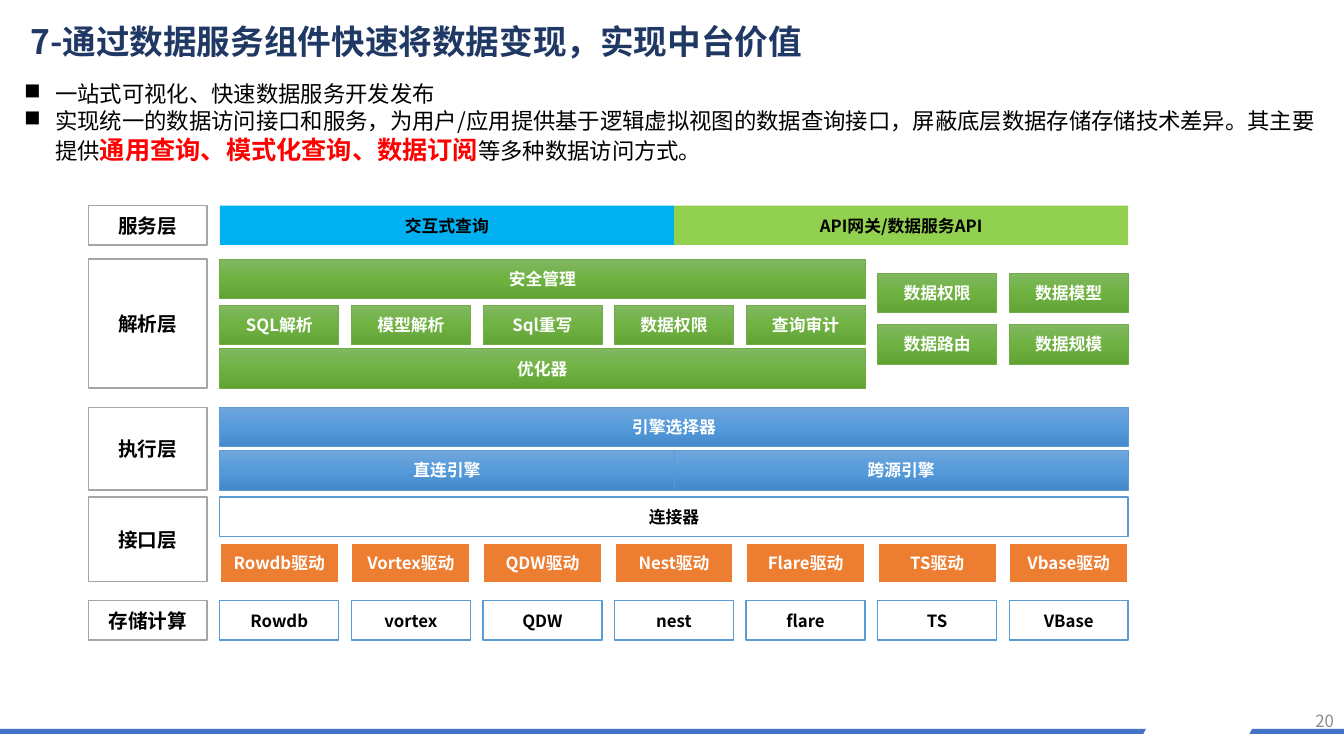
from copy import deepcopy
from lxml.etree import SubElement
from pptx import Presentation
from pptx.dml.color import RGBColor
from pptx.enum.shapes import MSO_SHAPE
from pptx.enum.text import MSO_ANCHOR, MSO_AUTO_SIZE, PP_ALIGN
from pptx.oxml.ns import qn
from pptx.util import Inches, Pt

FONT = "Noto Sans CJK SC"
BLACK = RGBColor(0x00, 0x00, 0x00)
WHITE = RGBColor(0xFF, 0xFF, 0xFF)
RED = RGBColor(0xFF, 0x00, 0x00)
NAVY = RGBColor(0x20, 0x38, 0x64)
GRAY = RGBColor(0x8C, 0x8C, 0x8C)
SILVER = RGBColor(0xA5, 0xA5, 0xA5)
FOOTER_BLUE = RGBColor(0x44, 0x72, 0xC4)
SKY = RGBColor(0x00, 0xB0, 0xF0)
LIME = RGBColor(0x92, 0xD0, 0x50)
ORANGE = RGBColor(0xED, 0x7D, 0x31)
BLUE = RGBColor(0x5B, 0x9B, 0xD5)
GREEN = RGBColor(0x70, 0xAD, 0x47)
GREEN_SHADES = (RGBColor(0x81, 0xB8, 0x61), RGBColor(0x6F, 0xB2, 0x42), RGBColor(0x62, 0xA3, 0x36))
BLUE_SHADES = (RGBColor(0x71, 0xA6, 0xDB), RGBColor(0x55, 0x9B, 0xDB), RGBColor(0x44, 0x8A, 0xCA))

TITLE = "7-通过数据服务组件快速将数据变现，实现中台价值"
PAGE_NUMBER = "20"
BULLETS = [
    [("一站式可视化、快速数据服务开发发布", 16, BLACK, False)],
    [
        ("实现统一的数据访问接口和服务，为用户/应用提供基于逻辑虚拟视图的数据查询接口，"
         "屏蔽底层数据存储存储技术差异。其主要提供", 16, BLACK, False),
        ("通用查询、模式化查询、数据订阅", 18, RED, True),
        ("等多种数据访问方式。", 16, BLACK, False),
    ],
]

# style: fills (one, or three for a gradient), line colour, line width, text colour, text size
STYLES = {
    "label": ((WHITE,), SILVER, 1, BLACK, 14),
    "query": ((SKY,), None, 0, BLACK, 12),
    "gateway": ((LIME,), None, 0, BLACK, 12),
    "parse": (GREEN_SHADES, GREEN, 0.5, WHITE, 12),
    "engine": (BLUE_SHADES, BLUE, 0.5, WHITE, 12),
    "driver": ((ORANGE,), WHITE, 1.5, WHITE, 12),
    "plain": ((WHITE,), BLUE, 1, BLACK, 12),
}
LAYERS = [
    ("服务层", 2.04, 0.39),
    ("解析层", 2.57, 1.28),
    ("执行层", 4.04, 0.82),
    ("接口层", 4.93, 0.84),
    ("存储计算", 5.96, 0.39),
]
STORES = ["Rowdb", "vortex", "QDW", "nest", "flare", "TS", "VBase"]
DRIVERS = ["Rowdb驱动", "Vortex驱动", "QDW驱动", "Nest驱动", "Flare驱动", "TS驱动", "Vbase驱动"]
# top, first column, columns spanned by the row, style, texts
GRID_ROWS = [
    (2.57, 0, 5, "parse", ["安全管理"]),
    (3.03, 0, 5, "parse", ["SQL解析", "模型解析", "Sql重写", "数据权限", "查询审计"]),
    (3.46, 0, 5, "parse", ["优化器"]),
    (2.71, 5, 2, "parse", ["数据权限", "数据模型"]),
    (3.22, 5, 2, "parse", ["数据路由", "数据规模"]),
    (4.04, 0, 7, "engine", ["引擎选择器"]),
    (4.93, 0, 7, "plain", ["连接器"]),
    (5.39, 0, 7, "driver", DRIVERS),
    (5.96, 0, 7, "plain", STORES),
]
HALVES = [
    (2.04, [("query", "交互式查询"), ("gateway", "API网关/数据服务API")]),
    (4.47, [("engine", "直连引擎"), ("engine", "跨源引擎")]),
]
GRID_LEFT, CELL, GAP, ROW_HEIGHT = 2.18, 1.18, 0.125, 0.39
PITCH = CELL + GAP
GRID_WIDTH = 7 * PITCH - GAP


def add_span(para, text, size, color, bold):
    span = para.add_run()
    span.text = text
    font = span.font
    font.name, font.size, font.bold = FONT, Pt(size), bold
    font.color.rgb = color
    SubElement(font._element, qn("a:ea")).set("typeface", FONT)


def paint(shape, fills, line=None, line_width=0):
    shape.shadow.inherit = False
    if len(fills) == 1:
        shape.fill.solid()
        shape.fill.fore_color.rgb = fills[0]
    else:
        shape.fill.gradient()
        shape.fill.gradient_angle = 270
        stops = shape._element.spPr.find(qn("a:gradFill")).find(qn("a:gsLst"))
        stops.append(deepcopy(stops[-1]))
        for index, (stop, color) in enumerate(zip(shape.fill.gradient_stops, fills)):
            stop.position = index / 2
            stop.color.rgb = color
    if line is None:
        shape.line.fill.background()
    else:
        shape.line.color.rgb = line
        shape.line.width = Pt(line_width)


def add_box(page, left, top, width, height, style, text):
    fills, line, line_width, color, size = STYLES[style]
    box = page.shapes.add_shape(
        MSO_SHAPE.RECTANGLE, Inches(left), Inches(top), Inches(width), Inches(height))
    paint(box, fills, line, line_width)
    box.text_frame.word_wrap = True
    box.text_frame.vertical_anchor = MSO_ANCHOR.MIDDLE
    para = box.text_frame.paragraphs[0]
    para.alignment = PP_ALIGN.CENTER
    add_span(para, text, size, color, True)


def add_text_frame(page, left, top, width, height):
    box = page.shapes.add_textbox(Inches(left), Inches(top), Inches(width), Inches(height))
    box.text_frame.word_wrap = True
    return box.text_frame


def add_footer(page):
    bar = page.shapes.add_shape(
        MSO_SHAPE.RECTANGLE, 0, Inches(7.23), Inches(13.33), Inches(0.05))
    paint(bar, (FOOTER_BLUE,))
    outline = page.shapes.build_freeform(Inches(11.29), Inches(7.38))
    corners = [(11.44, 7.09), (12.49, 7.09), (12.34, 7.38)]
    outline.add_line_segments([(Inches(x), Inches(y)) for x, y in corners])
    paint(outline.convert_to_shape(), (WHITE,))
    frame = add_text_frame(page, 10.33, 6.95, 3, 0.4)
    frame.vertical_anchor = MSO_ANCHOR.MIDDLE
    frame.paragraphs[0].alignment = PP_ALIGN.RIGHT
    add_span(frame.paragraphs[0], PAGE_NUMBER, 12, GRAY, False)


def add_title(page):
    title = page.shapes.title
    title.left, title.top = Inches(0.2), Inches(0.2)
    title.width, title.height = Inches(12.22), Inches(0.5)
    frame = title.text_frame
    frame.word_wrap = True
    frame.auto_size = MSO_AUTO_SIZE.NONE
    frame.vertical_anchor = MSO_ANCHOR.TOP
    para = frame.paragraphs[0]
    para.alignment = PP_ALIGN.LEFT
    para.line_spacing = 0.9
    add_span(para, TITLE, 24, NAVY, True)


def add_bullets(page):
    frame = add_text_frame(page, 0.14, 0.75, 13.19, 1.21)
    for index, spans in enumerate(BULLETS):
        para = frame.add_paragraph() if index else frame.paragraphs[0]
        settings = para._p.get_or_add_pPr()
        settings.set("marL", str(Inches(0.31)))
        settings.set("indent", str(-Inches(0.31)))
        SubElement(settings, qn("a:buChar")).set("char", "■")
        for span in spans:
            add_span(para, *span)


def add_layers(page):
    for name, top, height in LAYERS:
        add_box(page, GRID_LEFT - PITCH, top, CELL, height, "label", name)
    for top, first, span, style, texts in GRID_ROWS:
        step = span * PITCH / len(texts)
        for index, text in enumerate(texts):
            left = GRID_LEFT + first * PITCH + index * step
            add_box(page, left, top, step - GAP, ROW_HEIGHT, style, text)
    for top, halves in HALVES:
        for index, (style, text) in enumerate(halves):
            width = GRID_WIDTH / 2
            add_box(page, GRID_LEFT + index * width, top, width, ROW_HEIGHT, style, text)


def main():
    deck = Presentation()
    deck.slide_width, deck.slide_height = Inches(13.33), Inches(7.5)
    page = deck.slides.add_slide(deck.slide_layouts[5])
    add_footer(page)
    add_title(page)
    add_bullets(page)
    add_layers(page)
    deck.save("out.pptx")


if __name__ == "__main__":
    main()
